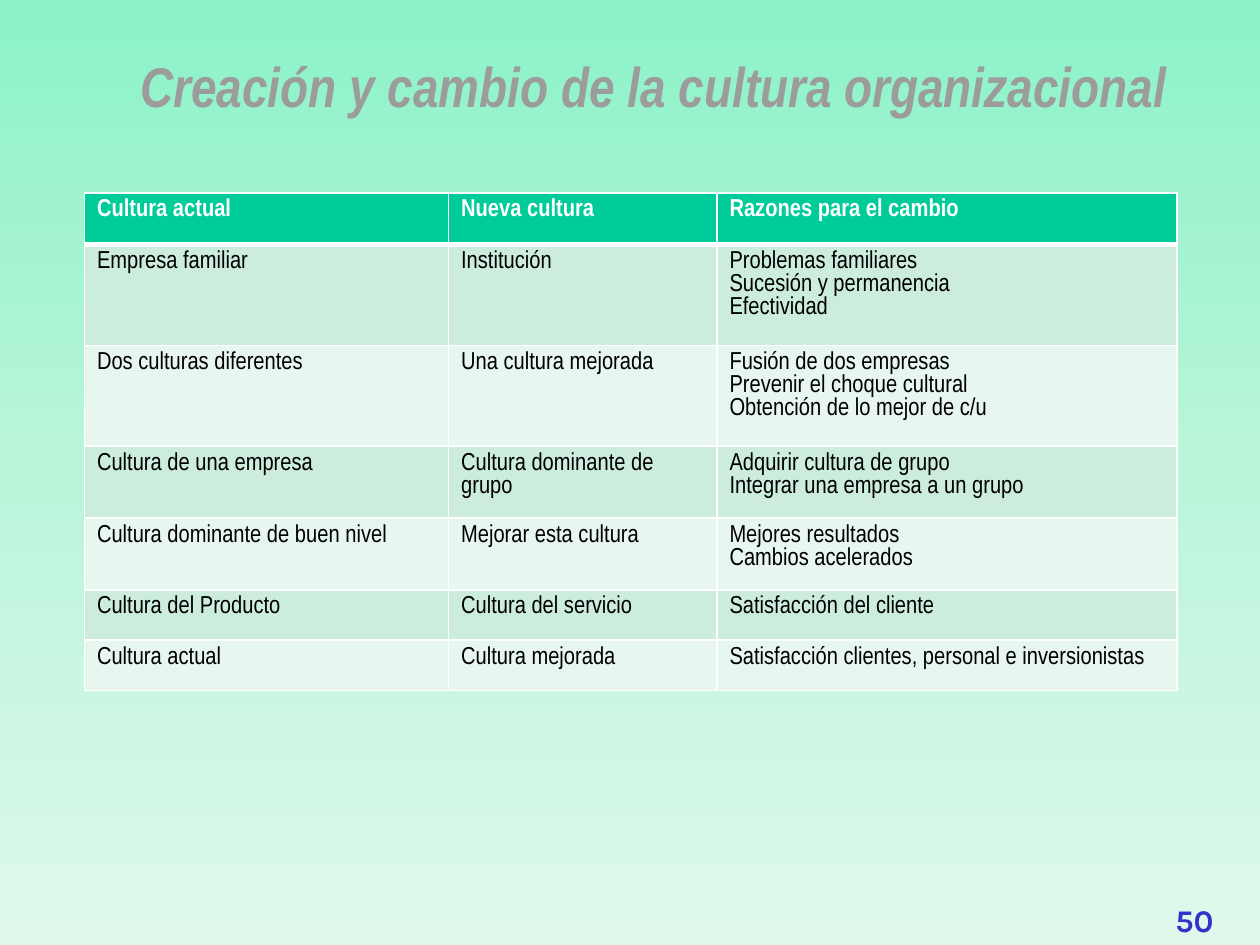
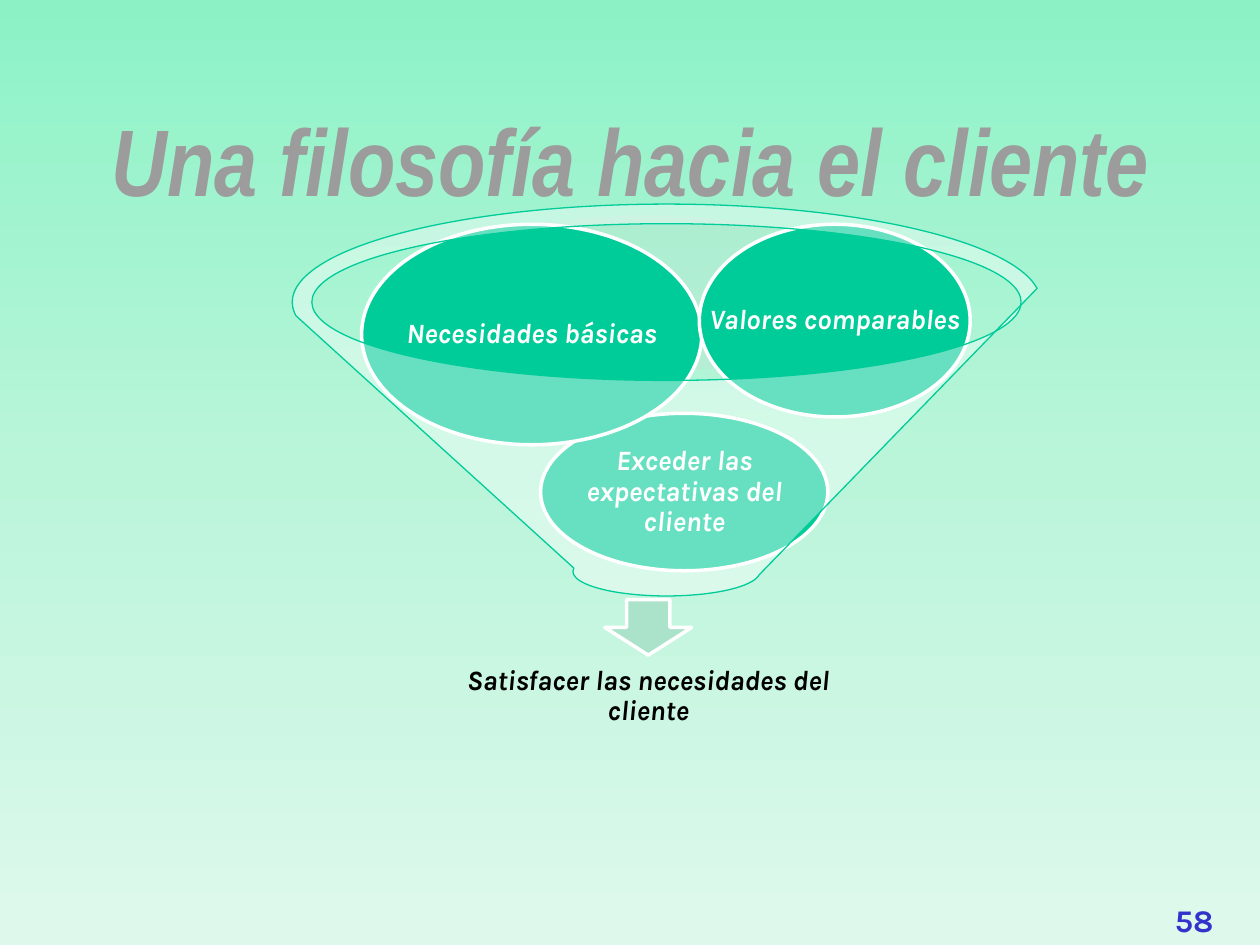
"""Two slides on organisational culture: a table of cultural changes and a customer funnel."""
from lxml import etree
from pptx import Presentation
from pptx.dml.color import RGBColor
from pptx.enum import shapes, text
from pptx.oxml.ns import qn
from pptx.util import Inches, Pt

GREEN = RGBColor(0x00, 0xCC, 0x99)
DARK_BAND = RGBColor(0xCC, 0xEC, 0xDE)
LIGHT_BAND = RGBColor(0xE7, 0xF6, 0xEF)
MOUTH_GREEN = RGBColor(0xBD, 0xE7, 0xD4)
ARROW_GREEN = RGBColor(0xAB, 0xE2, 0xCA)
GREY = RGBColor(0x9C, 0x9C, 0x9C)
BLUE = RGBColor(0x33, 0x33, 0xCC)
WHITE = RGBColor(0xFF, 0xFF, 0xFF)
BLACK = RGBColor(0, 0, 0)
BACKGROUND = [(0, "8CF2C6"), (50, "BAF5DA"), (100, "DEF9EC")]
TITLE_FONT, BODY_FONT = "Arial Narrow", "Karla"
CENTER, RIGHT = text.PP_ALIGN.CENTER, text.PP_ALIGN.RIGHT


def write(frame, words, font, size, color, bold=True, italic=False, align=None, spacing=None):
    frame.text = words
    for paragraph in frame.paragraphs:
        paragraph.alignment = align
        paragraph.line_spacing = spacing
        for run in paragraph.runs:
            run.font.name = font
            run.font.size = Pt(size)
            run.font.bold = bold
            run.font.italic = italic
            run.font.color.rgb = color


def add_part(slide, preset, box, fill, line=None, width=2, opacity=None):
    part = slide.shapes.add_shape(preset, *map(Inches, box))
    part.shadow.inherit = False
    part.fill.solid()
    part.fill.fore_color.rgb = fill
    if opacity:
        color = part.fill._xPr.find(".//" + qn("a:srgbClr"))
        etree.SubElement(color, qn("a:alpha"), val=str(opacity * 1000))
    if line is None:
        part.line.fill.background()
    else:
        part.line.color.rgb = line
        part.line.width = Pt(width)


prs = Presentation()
prs.slide_width, prs.slide_height = Inches(10), Inches(7.5)

backdrop = prs.slide_master.background.fill
backdrop.gradient()
backdrop.gradient_angle = 270
stops = prs.slide_master.element.find(".//" + qn("p:bg") + "//" + qn("a:gsLst"))
for stop in list(stops):
    stops.remove(stop)
for position, tint in BACKGROUND:
    stop = etree.SubElement(stops, qn("a:gs"), pos=str(position * 1000))
    etree.SubElement(stop, qn("a:srgbClr"), val=tint)

pages = [
    ("Creación y cambio de la cultura organizacional", 32, (0.98, 0.36, 8.42, 0.64), "50"),
    ("Una filosofía hacia el cliente", 54, (0.74, 0.76, 8.53, 1.01), "58"),
]
slides = []
for heading, size, box, number in pages:
    slide = prs.slides.add_slide(prs.slide_layouts[5])
    title = slide.shapes.title
    title.left, title.top, title.width, title.height = map(Inches, box)
    write(title.text_frame, heading, TITLE_FONT, size, GREY, italic=True, align=CENTER)
    title.text_frame.word_wrap = False
    title.text_frame.auto_size = text.MSO_AUTO_SIZE.NONE
    title.text_frame.vertical_anchor = text.MSO_ANCHOR.TOP
    page_number = slide.shapes.add_textbox(Inches(7.17), Inches(7.1), Inches(2.56), Inches(0.35))
    page_number.text_frame.word_wrap = True
    write(page_number.text_frame, number, BODY_FONT, 18, BLUE, align=RIGHT)
    slides.append(slide)
change_slide, customer_slide = slides

changes = [
    ("Cultura actual", "Nueva cultura", "Razones para el cambio"),
    ("Empresa familiar", "Institución",
     "Problemas familiares\nSucesión y permanencia\nEfectividad"),
    ("Dos culturas diferentes", "Una cultura mejorada",
     "Fusión de dos empresas\nPrevenir el choque cultural\nObtención de lo mejor de c/u"),
    ("Cultura de una empresa", "Cultura dominante de grupo",
     "Adquirir cultura de grupo\nIntegrar una empresa a un grupo"),
    ("Cultura dominante de buen nivel", "Mejorar esta cultura",
     "Mejores resultados\nCambios acelerados"),
    ("Cultura del Producto", "Cultura del servicio", "Satisfacción del cliente"),
    ("Cultura actual", "Cultura mejorada", "Satisfacción clientes, personal e inversionistas"),
]
row_heights = [0.41, 0.8, 0.8, 0.57, 0.57, 0.4, 0.4]
column_widths = [2.89, 2.13, 3.65]
table = change_slide.shapes.add_table(
    len(changes), len(column_widths), Inches(0.67), Inches(1.53),
    Inches(sum(column_widths)), Inches(sum(row_heights))).table
for column, width in zip(table.columns, column_widths):
    column.width = Inches(width)
for r, (change, height) in enumerate(zip(changes, row_heights)):
    table.rows[r].height = Inches(height)
    for c, words in enumerate(change):
        cell = table.cell(r, c)
        write(cell.text_frame, words, TITLE_FONT, 14, BLACK if r else WHITE, bold=r == 0)
        for side in "LRTB":
            thick = (r, side) in ((0, "B"), (1, "T"))
            border = etree.SubElement(
                cell._tc.get_or_add_tcPr(), qn("a:ln" + side), w=str(Pt(3 if thick else 1)))
            etree.SubElement(etree.SubElement(border, qn("a:solidFill")), qn("a:srgbClr"), val=str(WHITE))
        cell.fill.solid()
        cell.fill.fore_color.rgb = GREEN if r == 0 else DARK_BAND if r % 2 else LIGHT_BAND

preset = shapes.MSO_SHAPE
add_part(customer_slide, preset.OVAL, (3.35, 1.71, 3.58, 1.24), MOUTH_GREEN, opacity=40)
add_part(customer_slide, preset.DOWN_ARROW, (4.8, 4.76, 0.69, 0.44), ARROW_GREEN, WHITE)
ideas = [
    ("Satisfacer las necesidades del cliente", (3.48, 5.11, 3.33, 0.83), BLACK, 0.12),
    ("Exceder las expectativas del cliente", (4.29, 3.28, 2.28, 1.25), WHITE, 0.02),
    ("Necesidades básicas", (2.87, 1.78, 2.7, 1.75), WHITE, 0.02),
    ("Valores comparables", (5.55, 1.78, 2.15, 1.53), WHITE, 0.02),
]
for idea, box, color, inset in ideas:
    if color == WHITE:
        add_part(customer_slide, preset.OVAL, box, GREEN, WHITE)
    frame = customer_slide.shapes.add_textbox(*map(Inches, box)).text_frame
    frame.word_wrap = True
    frame.vertical_anchor = text.MSO_ANCHOR.MIDDLE
    frame.margin_left = frame.margin_right = frame.margin_top = frame.margin_bottom = Inches(inset)
    write(frame, idea, BODY_FONT, 16, color, italic=True, align=CENTER, spacing=0.9)
add_part(customer_slide, preset.FUNNEL, (2.32, 1.62, 5.94, 3.11), WHITE, GREEN, 0.75, 40)

prs.save("out.pptx")
